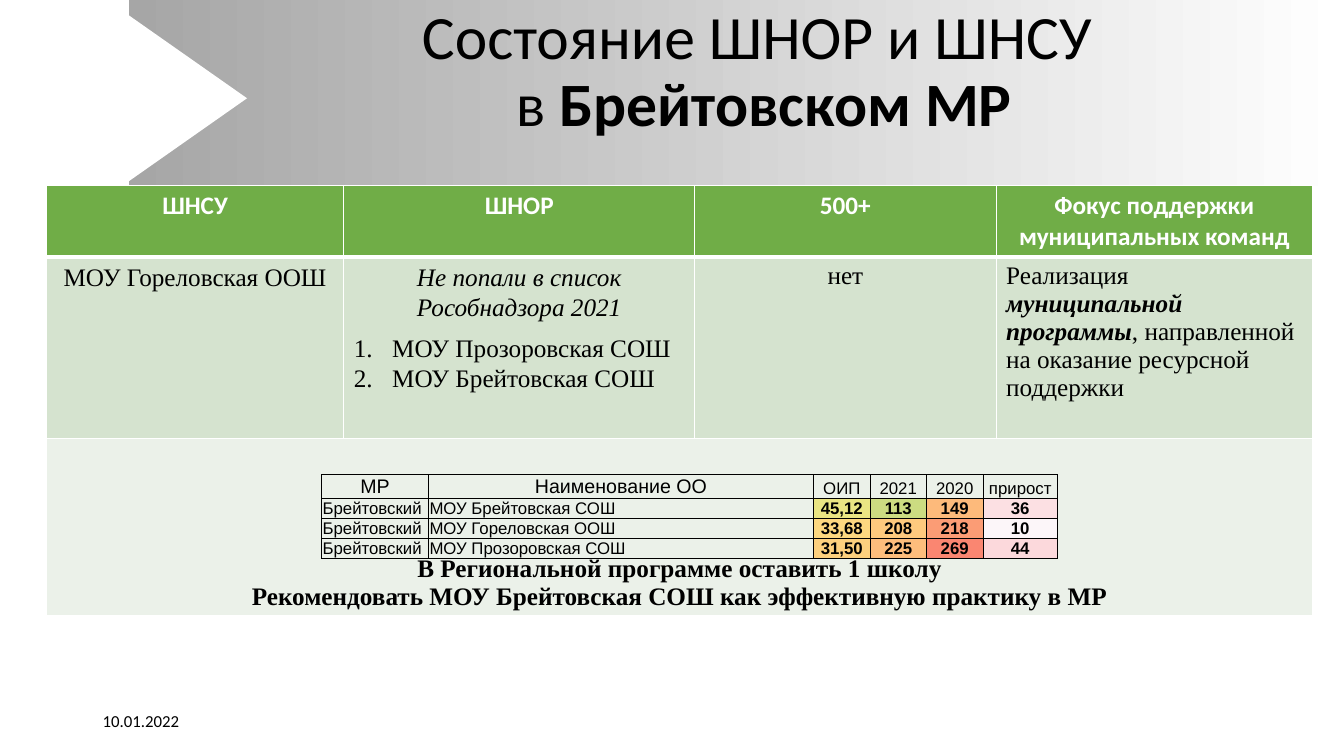
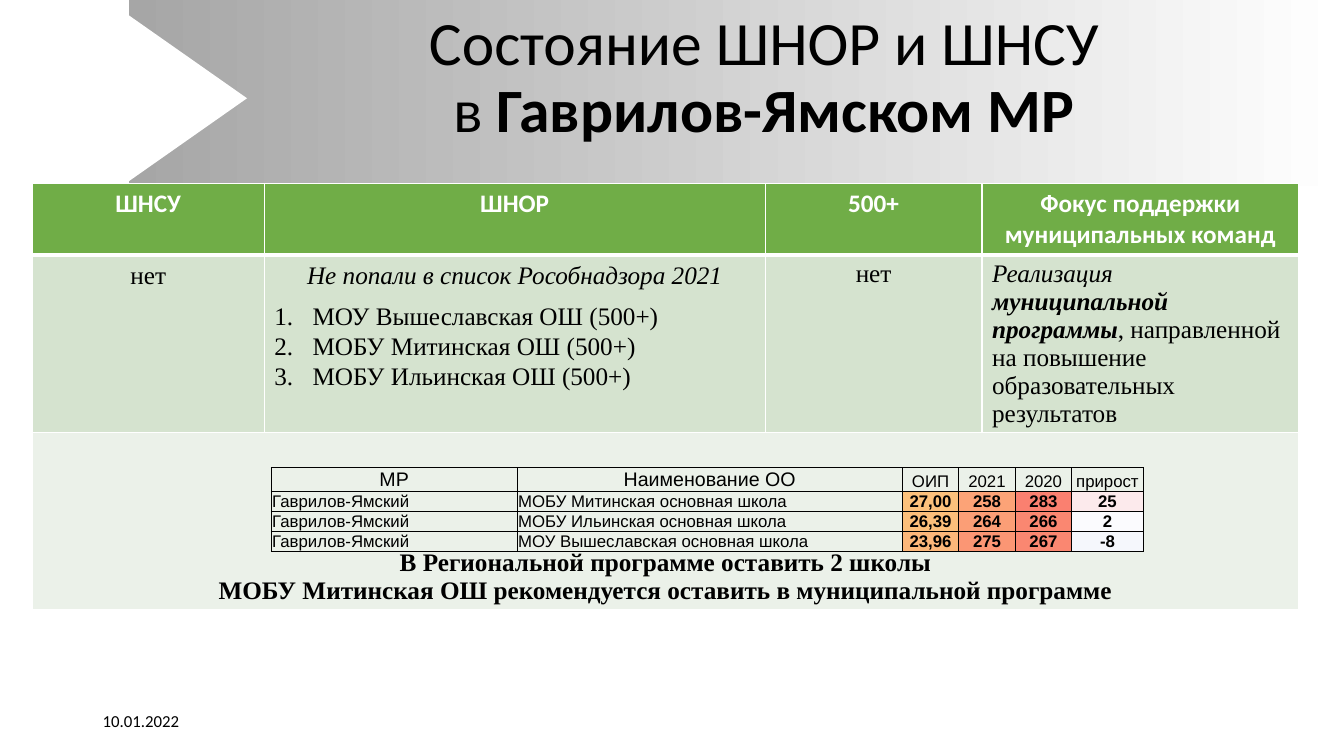
from dataclasses import dataclass
from typing import Optional, Sequence

from lxml import etree
from pptx import Presentation
from pptx import util as u
from pptx.dml import color
from pptx.enum import shapes, text
from pptx.oxml import ns

BLACK = color.RGBColor(0x00, 0x00, 0x00)
WHITE = color.RGBColor(0xFF, 0xFF, 0xFF)
GREY = color.RGBColor(0xA6, 0xA6, 0xA6)
GREEN = color.RGBColor(0x70, 0xAD, 0x47)
PALE_GREEN = color.RGBColor(0xD5, 0xE3, 0xCF)
MIST = color.RGBColor(0xEB, 0xF1, 0xE9)

SANS, SERIF, ARIAL = "Calibri", "Times New Roman", "Arial"
CENTER, LEFT = text.PP_ALIGN.CENTER, text.PP_ALIGN.LEFT
REPORT_DATE = "10.01.2022"
SUPPORT_HEADERS = ("ШНСУ", "ШНОР", "500+", "Фокус поддержки муниципальных команд")
RATING_HEADERS = ("МР", "Наименование ОО", "ОИП", "2021", "2020", "прирост")
NOT_LISTED = "Не попали в список Рособнадзора 2021"


@dataclass(frozen=True)
class Span:
    words: str
    bold: bool = False
    italic: bool = False


@dataclass(frozen=True)
class Line:
    spans: Sequence[Span]
    align: text.PP_ALIGN = CENTER
    spacing: float = 1.0
    after: int = 0
    numbered: bool = False


@dataclass(frozen=True)
class Face:
    font: str
    size: int
    ink: color.RGBColor = BLACK


@dataclass(frozen=True)
class School:
    name: str
    scores: Sequence[str]
    heat: Sequence[str]


@dataclass(frozen=True)
class District:
    heading: str
    name: str
    title_top: float
    support_at: tuple[float, float]
    support_columns: Sequence[float]
    support_rows: Sequence[float]
    low_support: str
    low_results: Sequence[str]
    focus: Sequence[Span]
    conclusions: Sequence[str]
    rating_at: tuple[float, float]
    rating_columns: Sequence[float]
    rating_name: str
    schools: Sequence[School]


DISTRICTS = (
    District(
        heading="Состояние ШНОР и ШНСУ \vв ",
        name="Брейтовском МР",
        title_top=0,
        support_at=(0.46, 1.84),
        support_columns=(2.95, 3.48, 2.99, 3.14),
        support_rows=(0.71, 1.8, 1.76),
        low_support="МОУ Гореловская ООШ",
        low_results=("МОУ Прозоровская СОШ", "МОУ Брейтовская СОШ"),
        focus=(
            Span("Реализация "),
            Span("муниципальной программы", bold=True, italic=True),
            Span(", направленной на оказание ресурсной поддержки"),
        ),
        conclusions=(
            "В Региональной программе оставить 1 школу",
            "Рекомендовать МОУ Брейтовская СОШ как эффективную практику в МР",
        ),
        rating_at=(3.19, 4.71),
        rating_columns=(1.06, 3.82, 0.56, 0.56, 0.56, 0.74),
        rating_name="Брейтовский",
        schools=(
            School("МОУ Брейтовская СОШ", ("45,12", "113", "149", "36"),
                   ("EAE583", "CCDC81", "FDBA7B", "FCE0E3")),
            School("МОУ Гореловская ООШ", ("33,68", "208", "218", "10"),
                   ("FDD880", "FECA7E", "FB9C75", "FCF6F9")),
            School("МОУ Прозоровская СОШ", ("31,50", "225", "269", "44"),
                   ("FDD07E", "FDBD7C", "FA8671", "FCD9DC")),
        ),
    ),
    District(
        heading="Состояние ШНОР и ШНСУ\vв ",
        name="Гаврилов-Ямском МР",
        title_top=0.06,
        support_at=(0.32, 1.82),
        support_columns=(2.3, 4.97, 2.15, 3.14),
        support_rows=(0.71, 1.76, 1.76),
        low_support="нет",
        low_results=("МОУ Вышеславская ОШ (500+)", "МОБУ Митинская ОШ (500+)",
                     "МОБУ Ильинская ОШ (500+)"),
        focus=(
            Span("Реализация", italic=True),
            Span(" муниципальной программы", bold=True, italic=True),
            Span(", направленной на повышение образовательных результатов"),
        ),
        conclusions=(
            "В Региональной программе оставить 2 школы",
            "МОБУ Митинская ОШ рекомендуется оставить в муниципальной программе",
        ),
        rating_at=(2.69, 4.64),
        rating_columns=(2.44, 3.82, 0.56, 0.56, 0.56, 0.71),
        rating_name="Гаврилов-Ямский",
        schools=(
            School("МОБУ Митинская основная школа", ("27,00", "258", "283", "25"),
                   ("FCC17C", "FCA377", "FA8070", "FCEAEC")),
            School("МОБУ Ильинская основная школа", ("26,39", "264", "266", "2"),
                   ("FCBF7B", "FB9E76", "FA8771", "FBFBFE")),
            School("МОУ Вышеславская основная школа", ("23,96", "275", "267", "-8"),
                   ("FCB77A", "FB9674", "FA8771", "F5F7FC")),
        ),
    ),
)


def style_run(run, face: Face, bold: bool = False, italic: bool = False) -> None:
    run.font.name = face.font
    run.font.size = u.Pt(face.size)
    run.font.color.rgb = face.ink
    run.font.bold = bold
    run.font.italic = italic


def write_lines(frame, lines: Sequence[Line], face: Face) -> None:
    for index, line in enumerate(lines):
        paragraph = frame.add_paragraph() if index else frame.paragraphs[0]
        paragraph.alignment = line.align
        paragraph.line_spacing = line.spacing
        paragraph.space_after = u.Pt(line.after)
        if line.numbered:
            properties = paragraph._p.get_or_add_pPr()
            properties.set("marL", str(u.Inches(0.38)))
            properties.set("indent", str(-u.Inches(0.38)))
            etree.SubElement(properties, ns.qn("a:buAutoNum"), type="arabicPeriod")
        for span in line.spans:
            run = paragraph.add_run()
            run.text = span.words
            style_run(run, face, span.bold, span.italic)


def border_cell(cell, ink: color.RGBColor, width: float, bottom: float) -> None:
    properties = cell._tc.get_or_add_tcPr()
    for index, side in enumerate("LRTB"):
        points = bottom if side == "B" else width
        edge = etree.Element(ns.qn(f"a:ln{side}"), w=str(u.Pt(points)))
        fill = etree.SubElement(edge, ns.qn("a:solidFill"))
        etree.SubElement(fill, ns.qn("a:srgbClr"), val=str(ink))
        properties.insert(index, edge)


def add_grid(slide, at: tuple[float, float], columns: Sequence[float], rows: Sequence[float]):
    grid = slide.shapes.add_table(
        len(rows), len(columns), u.Inches(at[0]), u.Inches(at[1]),
        u.Inches(sum(columns)), u.Inches(sum(rows))).table
    grid.first_row = False
    grid.horz_banding = False
    for column, width in zip(grid.columns, columns):
        column.width = u.Inches(width)
    for row, height in zip(grid.rows, rows):
        row.height = u.Inches(height)
    return grid


def fill_cell(cell, lines: Sequence[Line], face: Face, fill: Optional[color.RGBColor]) -> None:
    write_lines(cell.text_frame, lines, face)
    if fill is None:
        cell.fill.background()
    else:
        cell.fill.solid()
        cell.fill.fore_color.rgb = fill


def add_support_table(slide, district: District) -> None:
    grid = add_grid(slide, district.support_at, district.support_columns, district.support_rows)
    last = len(district.low_results) - 1
    results = [Line([Span(NOT_LISTED, italic=True)], spacing=1.07, after=8)] + [
        Line([Span(school)], LEFT, 1.07, 8 if index == last else 0, True)
        for index, school in enumerate(district.low_results)]
    details = (
        [Line([Span(district.low_support)], spacing=1.07, after=8)],
        results,
        [Line([Span("нет")])],
        [Line(district.focus, LEFT)],
    )
    for index, (header, detail) in enumerate(zip(SUPPORT_HEADERS, details)):
        fill_cell(grid.cell(0, index), [Line([Span(header, bold=True)])],
                  Face(SANS, 18, WHITE), GREEN)
        fill_cell(grid.cell(1, index), detail, Face(SERIF, 18), PALE_GREEN)
    summary = grid.cell(2, 0)
    summary.merge(grid.cell(2, len(SUPPORT_HEADERS) - 1))
    summary.vertical_anchor = text.MSO_ANCHOR.BOTTOM
    fill_cell(summary, [Line([Span(words, bold=True)]) for words in district.conclusions],
              Face(SERIF, 18), MIST)
    for row in range(len(district.support_rows)):
        for column in range(len(SUPPORT_HEADERS)):
            border_cell(grid.cell(row, column), WHITE, 1, 1 if row else 3)


def add_rating_table(slide, district: District) -> None:
    rows = [0.23] + [0.2] * len(district.schools)
    grid = add_grid(slide, district.rating_at, district.rating_columns, rows)
    for column, header in enumerate(RATING_HEADERS):
        fill_cell(grid.cell(0, column), [Line([Span(header)])],
                  Face(ARIAL, 14 if column < 2 else 12), None)
    for row, school in enumerate(district.schools, 1):
        for column, words in enumerate((district.rating_name, school.name)):
            fill_cell(grid.cell(row, column), [Line([Span(words)], LEFT)], Face(ARIAL, 12), None)
        for column, (score, heat) in enumerate(zip(school.scores, school.heat), 2):
            fill_cell(grid.cell(row, column), [Line([Span(score, bold=True)])],
                      Face(ARIAL, 12), color.RGBColor.from_string(heat))
    for cell in grid.iter_cells():
        cell.vertical_anchor = text.MSO_ANCHOR.BOTTOM
        cell.margin_left = cell.margin_right = cell.margin_top = u.Inches(0.01)
        cell.margin_bottom = 0
        border_cell(cell, BLACK, 0.5, 0.5)


def add_title(slide, district: District) -> None:
    title = slide.shapes.title
    title.left, title.top = u.Inches(1.83), u.Inches(district.title_top)
    title.width, title.height = u.Inches(11.5), u.Inches(1.45)
    frame = title.text_frame
    frame.auto_size = text.MSO_AUTO_SIZE.NONE
    frame.vertical_anchor = text.MSO_ANCHOR.MIDDLE
    paragraph = frame.paragraphs[0]
    paragraph.text = district.heading
    paragraph.alignment = CENTER
    paragraph.line_spacing = 0.9
    for run in paragraph.runs:
        style_run(run, Face(SANS, 44))
    name = paragraph.add_run()
    name.text = district.name
    style_run(name, Face(SANS, 44), bold=True)


def add_date(slide) -> None:
    date = slide.shapes.add_textbox(u.Inches(0.92), u.Inches(6.95), u.Inches(3), u.Inches(0.4))
    date.text_frame.word_wrap = True
    date.text_frame.vertical_anchor = text.MSO_ANCHOR.MIDDLE
    write_lines(date.text_frame, [Line([Span(REPORT_DATE)], LEFT)], Face(SANS, 12))


def move_band_to_layout(slide) -> None:
    band = slide.shapes.add_shape(shapes.MSO_SHAPE.RECTANGLE, u.Inches(1.28), 0,
                                  u.Inches(12.06), u.Inches(1.85))
    band.fill.gradient()
    band.fill.gradient_angle = 0
    for stop, ink, position in zip(band.fill.gradient_stops, (GREY, WHITE), (0, 1)):
        stop.color.rgb = ink
        stop.position = position
    notch = slide.shapes.add_shape(shapes.MSO_SHAPE.DIAMOND, u.Inches(0.1), u.Inches(0.15),
                                   u.Inches(2.35), u.Inches(1.65))
    notch.fill.solid()
    notch.fill.fore_color.rgb = WHITE
    for index, shape in enumerate((band, notch), 2):
        shape.shadow.inherit = False
        shape.line.fill.background()
        slide.slide_layout.shapes._spTree.insert(index, shape._element)


def main() -> None:
    deck = Presentation()
    deck.slide_width, deck.slide_height = u.Inches(13.33), u.Inches(7.5)
    layout = deck.slide_layouts[5]
    for index, district in enumerate(DISTRICTS):
        slide = deck.slides.add_slide(layout)
        if index == 0:
            move_band_to_layout(slide)
        add_title(slide, district)
        add_support_table(slide, district)
        add_rating_table(slide, district)
        add_date(slide)
    deck.save("out.pptx")


if __name__ == "__main__":
    main()
